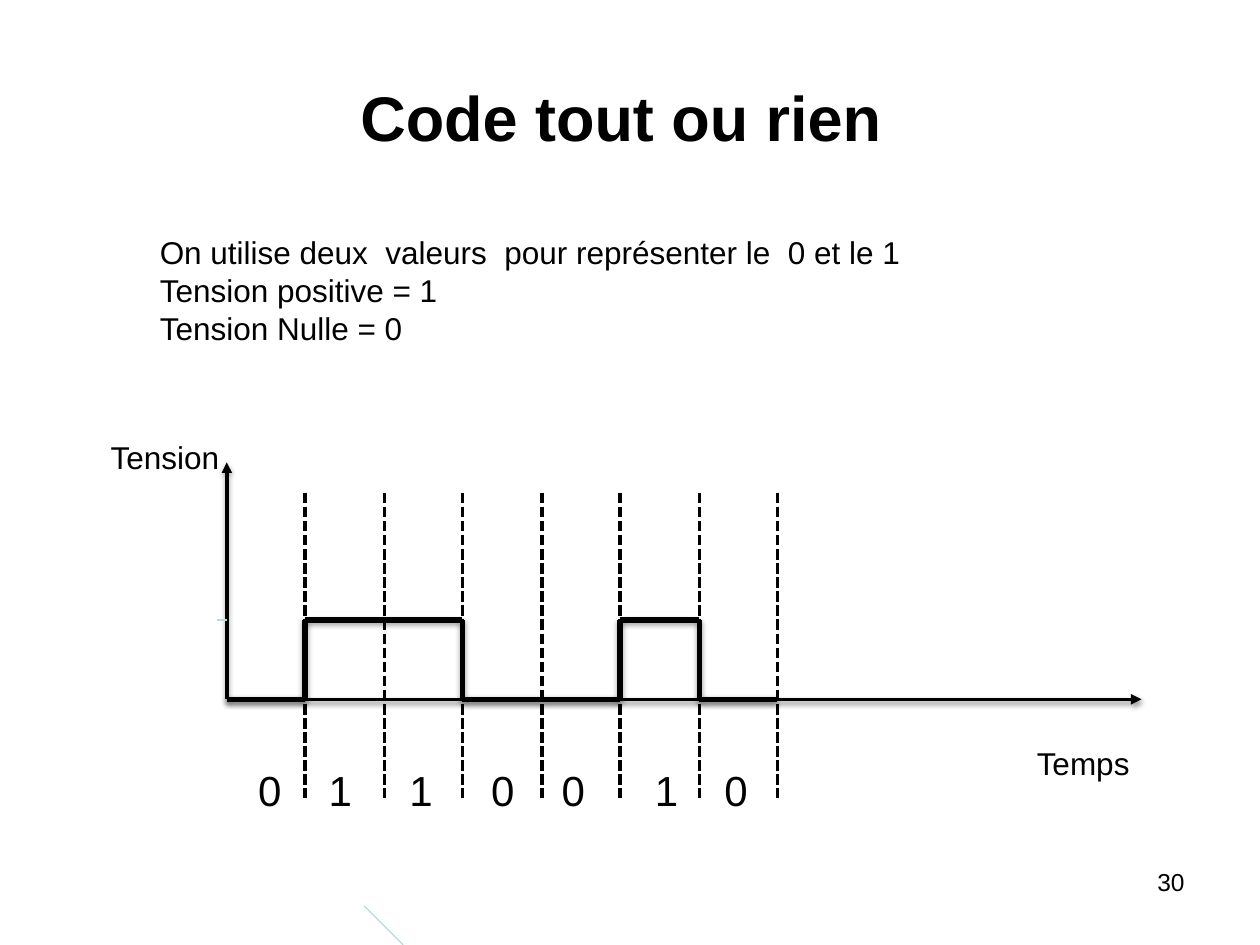
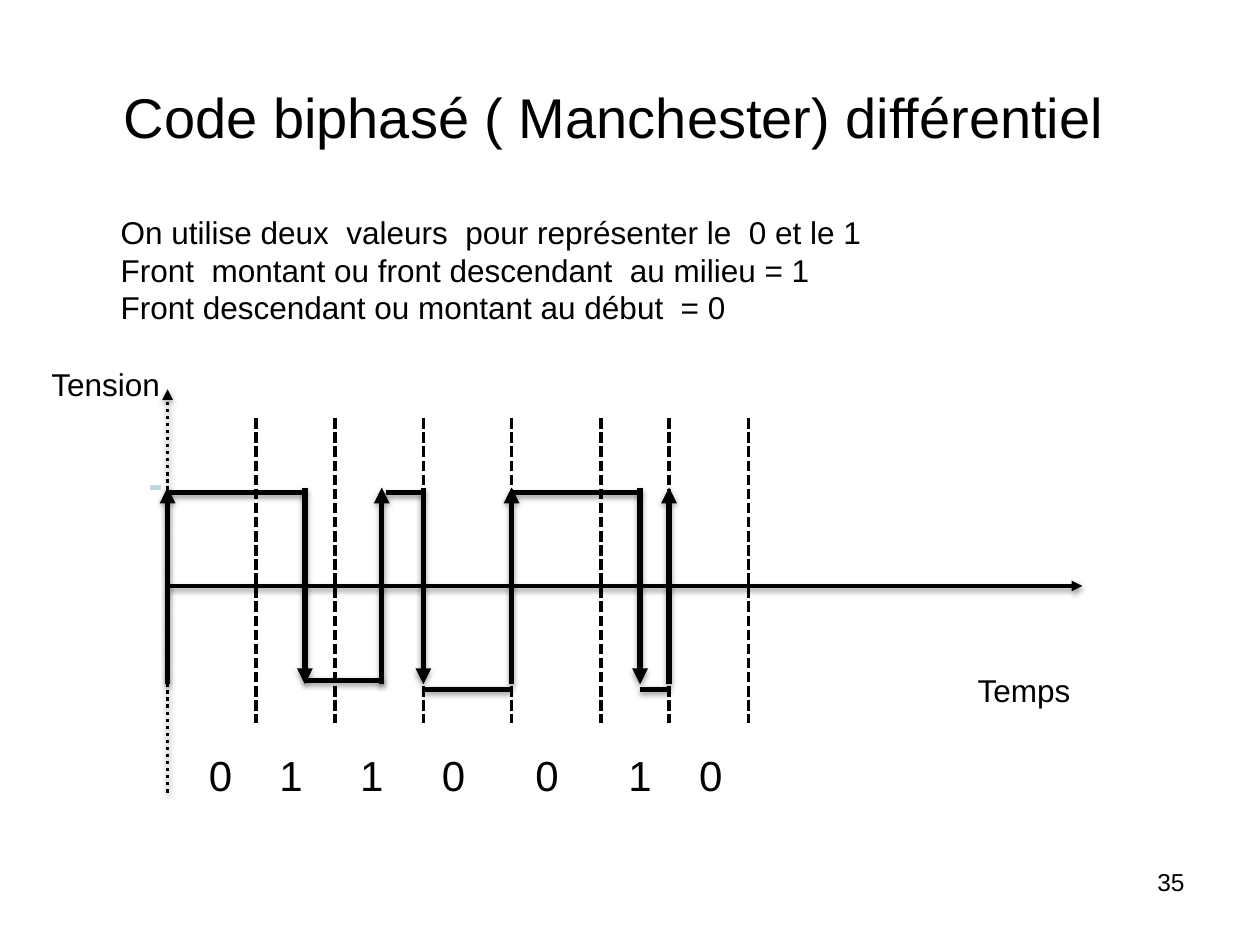
from itertools import accumulate, pairwise

from lxml import etree
from pptx import Presentation
from pptx.dml.color import RGBColor
from pptx.enum.dml import MSO_LINE
from pptx.enum.shapes import MSO_CONNECTOR
from pptx.enum.text import MSO_ANCHOR, PP_ALIGN
from pptx.oxml.ns import qn
from pptx.util import Emu, Pt

STRAIGHT = MSO_CONNECTOR.STRAIGHT
DASHED, DOTTED = MSO_LINE.SQUARE_DOT, MSO_LINE.ROUND_DOT
LEFT, CENTER, RIGHT = PP_ALIGN.LEFT, PP_ALIGN.CENTER, PP_ALIGN.RIGHT
TOP, MIDDLE = MSO_ANCHOR.TOP, MSO_ANCHOR.MIDDLE

EMU_PER_PX = 9144  # 100 px to the inch
COLORS = {"ink": "000000", "accent": "B6DCDF"}
FONT = "Arial"
BLANK_LAYOUT = 6


def px(length):
    return Emu(length * EMU_PER_PX)


class SlideWriter:
    """Holds the shared style and the slide being written."""

    def __init__(self, presentation):
        self.presentation = presentation
        self.slide = None

    def new_slide(self, title, title_size, bold, title_inset, page):
        layout = self.presentation.slide_layouts[BLANK_LAYOUT]
        self.slide = self.presentation.slides.add_slide(layout)
        box = self.text([title], 50, 30, 900, 125, title_size, CENTER, MIDDLE, bold)
        box.text_frame.margin_right = px(title_inset)
        self.text([page], 717, 683, 233, 52, 14, RIGHT)

    def text(self, lines, left, top, width, height, size=18,
             align=LEFT, anchor=TOP, bold=False):
        box = self.slide.shapes.add_textbox(px(left), px(top), px(width), px(height))
        frame = box.text_frame
        frame.word_wrap = True
        frame.vertical_anchor = anchor
        frame.text = "\n".join(lines)
        for paragraph in frame.paragraphs:
            paragraph.alignment = align
            for run in paragraph.runs:
                run.font.name = FONT
                run.font.size = Pt(size)
                run.font.bold = bold
                run.font.color.rgb = RGBColor.from_string(COLORS["ink"])
        return box

    def bits(self, digits, gaps, left, top):
        """Writes the bits on one line, each at its own tab stop."""
        box = self.text(["\t".join(digits)], left, top, 617, 51, 24)
        properties = box.text_frame.paragraphs[0]._p.get_or_add_pPr()
        stops = etree.SubElement(properties, qn("a:tabLst"))
        for position in accumulate(gaps):
            etree.SubElement(stops, qn("a:tab"), pos=str(px(position)), algn="l")

    def line(self, x1, y1, x2, y2, weight=2, color="ink", dash=None,
             arrow=False, shadow=False):
        connector = self.slide.shapes.add_connector(
            STRAIGHT, px(x1), px(y1), px(x2), px(y2))
        connector.line.color.rgb = RGBColor.from_string(COLORS[color])
        connector.line.width = Pt(weight)
        if dash is not None:
            connector.line.dash_style = dash
        if arrow:
            etree.SubElement(connector.line._get_or_add_ln(),
                             qn("a:tailEnd"), type="triangle")
        effects = etree.SubElement(connector._element.spPr, qn("a:effectLst"))
        if shadow:
            outer = etree.SubElement(effects, qn("a:outerShdw"), blurRad="40000",
                                     dist="20000", dir="5400000", rotWithShape="0")
            black = etree.SubElement(outer, qn("a:srgbClr"), val=COLORS["ink"])
            etree.SubElement(black, qn("a:alpha"), val="38000")

    def signal(self, x1, y1, x2, y2, arrow=False):
        self.line(x1, y1, x2, y2, weight=3, arrow=arrow, shadow=True)

    def axes(self, left, top, bottom, time_level, time_label_top, dash=None):
        self.line(left, bottom, left, top, dash=dash, arrow=True, shadow=True)
        self.line(left, time_level, left + 726, time_level, arrow=True, shadow=True)
        self.text(["Tension"], left - 102, top - 24, 114, 40)
        self.text(["Temps"], left + 633, time_label_top, 102, 40)

    def bit_limits(self, positions, top):
        for x in positions:
            self.line(x, top, x, top + 242, dash=DASHED)


def on_off_slide(writer):
    writer.new_slide("Code tout ou rien", 36, True, 24, "30")
    writer.text(["On utilise deux  valeurs  pour représenter le  0 et le 1",
                 "Tension positive = 1",
                 "Tension Nulle = 0"], 117, 180, 613, 131)
    writer.axes(180, 367, 555, 555, 586)
    writer.bits("0110010", [56, 64, 65, 56, 74, 55], 195, 602)

    # Accent strokes
    writer.line(172, 492, 180, 492, weight=0.75, color="accent")
    writer.line(289, 719, 320, 750, weight=0.75, color="accent")

    # One bit lasts 62.5 px
    limits = [180 + 125 * index // 2 for index in range(8)]
    writer.bit_limits(limits[1:], 391)

    # Signal: one level per bit, an edge wherever the level changes
    levels = [492 if bit == "1" else 555 for bit in "0110010"]
    for (start, end), level in zip(pairwise(limits), levels):
        writer.signal(start, level, end, level)
    for x, (before, after) in zip(limits[1:], pairwise(levels)):
        if before != after:
            writer.signal(x, before, x, after)


def differential_manchester_slide(writer):
    writer.new_slide("Code biphasé ( Manchester) différentiel", 32, False, 35, "35")
    writer.text(["On utilise deux  valeurs  pour représenter le  0 et le 1",
                 "Front  montant ou front descendant  au milieu = 1",
                 "Front descendant ou montant au début  = 0"], 86, 164, 613, 192)
    writer.axes(133, 309, 629, 465, 528, DOTTED)
    writer.bits("0110010", [56, 64, 65, 74, 74, 56], 156, 590)
    writer.bit_limits([203, 266, 336, 406, 477, 531, 594], 332)
    writer.line(119, 387, 128, 387, weight=3, color="accent")

    # Edges: rising and falling in turn
    high, low = 387, 543
    for index, x in enumerate([133, 242, 303, 336, 406, 508, 531]):
        start, end = (high, low) if index % 2 else (low, high)
        writer.signal(x, start, x, end, arrow=True)

    # Levels between the edges
    for start, end, level in [(133, 242, 391), (242, 305, 540), (306, 336, 391),
                              (336, 406, 547), (406, 508, 391), (508, 531, 547)]:
        writer.signal(start, level, end, level)


def main():
    presentation = Presentation()
    presentation.slide_width, presentation.slide_height = px(1000), px(750)
    writer = SlideWriter(presentation)
    on_off_slide(writer)
    differential_manchester_slide(writer)
    presentation.save("out.pptx")


if __name__ == "__main__":
    main()
